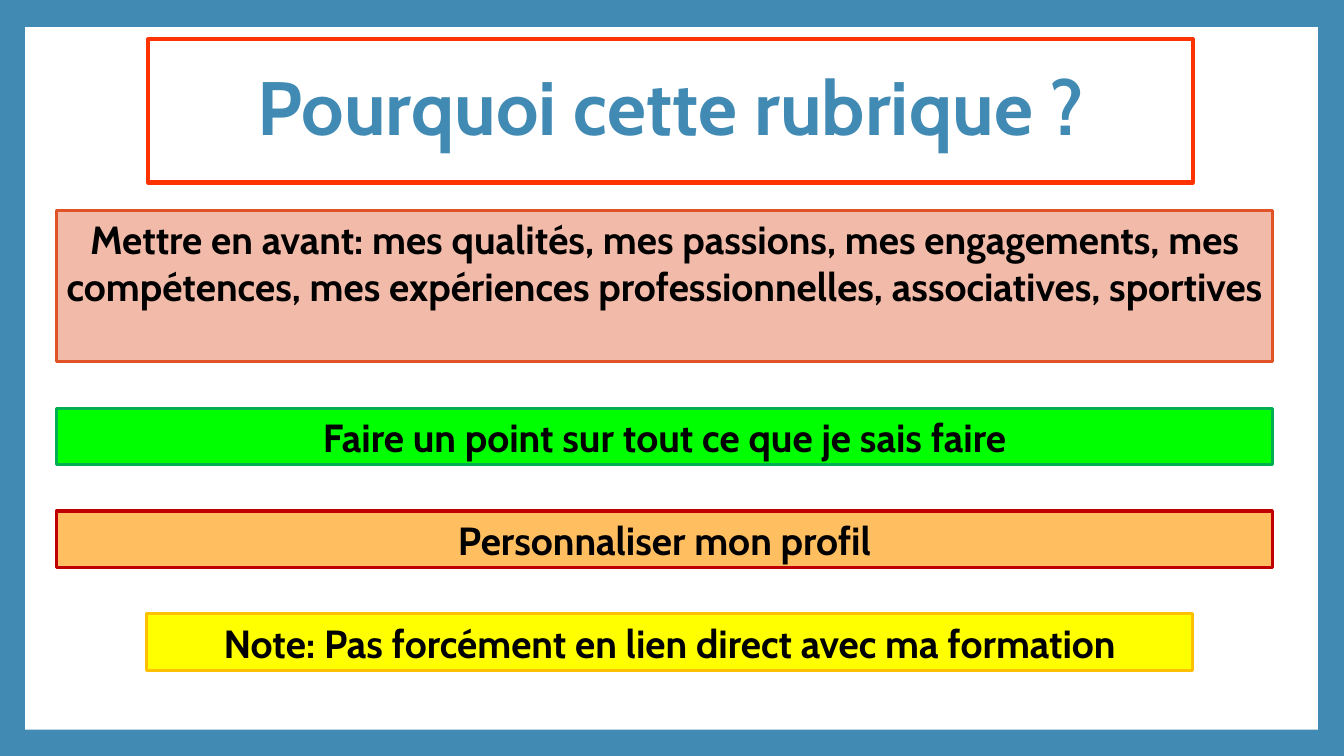
import pptx
import pptx.util
import pptx.dml.color
import pptx.enum.shapes
import pptx.enum.text

Inches = pptx.util.Inches
Pt = pptx.util.Pt
RGBColor = pptx.dml.color.RGBColor

BLUE = RGBColor(0x41, 0x8A, 0xB3)
WHITE = RGBColor(0xFF, 0xFF, 0xFF)
BLACK = RGBColor(0, 0, 0)
RED = RGBColor(0xFF, 0x33, 0x00)
SALMON = RGBColor(0xF2, 0xBA, 0xA9)
RUST = RGBColor(0xDF, 0x53, 0x27)
LIME = RGBColor(0x00, 0xFF, 0x00)
GREEN = RGBColor(0x00, 0xB0, 0x50)
ORANGE = RGBColor(0xFF, 0xBF, 0x61)
DARK_RED = RGBColor(0xC0, 0x00, 0x00)
YELLOW = RGBColor(0xFF, 0xFF, 0x00)
GOLD = RGBColor(0xFF, 0xC0, 0x00)

TITLE = "Pourquoi cette rubrique ?"
GOAL = ("Mettre en avant: mes qualités, mes passions, mes engagements, mes "
        "compétences, mes expériences professionnelles, associatives, sportives")
WIDE = (0.56, 12.06)
NARROW = (1.45, 10.38)
BANDS = [
    (GOAL, WIDE, 1.5, SALMON, RUST),
    ("Faire un point sur tout ce que je sais faire", WIDE, 0.56, LIME, GREEN),
    ("Personnaliser mon profil", WIDE, 0.56, ORANGE, DARK_RED),
    ("Note: Pas forcément en lien direct avec ma formation", NARROW, 0.56, YELLOW, GOLD),
]
FIRST_TOP = 2.09
GAP = 0.46


def write(box, text, size, color, anchor, spacing=1.0, inset=0.1):
    frame = box.text_frame
    frame.word_wrap = True
    frame.auto_size = pptx.enum.text.MSO_AUTO_SIZE.NONE
    frame.vertical_anchor = anchor
    frame.margin_left = frame.margin_right = Inches(inset)
    frame.margin_top = frame.margin_bottom = Inches(0.05)
    para = frame.paragraphs[0]
    para.alignment = pptx.enum.text.PP_ALIGN.CENTER
    para.line_spacing = spacing
    span = para.add_run()
    span.text = text
    span.font.name = "Cabin"
    span.font.size = Pt(size)
    span.font.bold = True
    span.font.color.rgb = color


def add_box(page, left, top, width, height, fill):
    box = page.shapes.add_shape(
        pptx.enum.shapes.MSO_SHAPE.RECTANGLE,
        Inches(left), Inches(top), Inches(width), Inches(height))
    box.shadow.inherit = False
    box.fill.solid()
    box.fill.fore_color.rgb = fill
    box.line.fill.background()
    return box


def outline(box, color, width):
    box.line.color.rgb = color
    box.line.width = Pt(width)


def main():
    deck = pptx.Presentation()
    deck.slide_width = Inches(13.33)
    deck.slide_height = Inches(7.5)
    page = deck.slides.add_slide(deck.slide_layouts[5])
    page.background.fill.solid()
    page.background.fill.fore_color.rgb = BLUE

    panel = add_box(page, 0.25, 0.27, 12.82, 6.97, WHITE)
    title = page.shapes.title
    title.element.addprevious(panel.element)
    title.left, title.top = Inches(1.47), Inches(0.39)
    title.width, title.height = Inches(10.36), Inches(1.42)
    outline(title, RED, 3)
    write(title, TITLE, 54, BLUE, pptx.enum.text.MSO_ANCHOR.MIDDLE, spacing=0.9)

    top = FIRST_TOP
    for text, (left, width), height, fill, border in BANDS:
        band = add_box(page, left, top, width, height, fill)
        outline(band, border, 2.25)
        write(band, text, 28, BLACK, pptx.enum.text.MSO_ANCHOR.TOP, inset=0.08)
        top += height + GAP

    deck.save("out.pptx")


if __name__ == "__main__":
    main()
